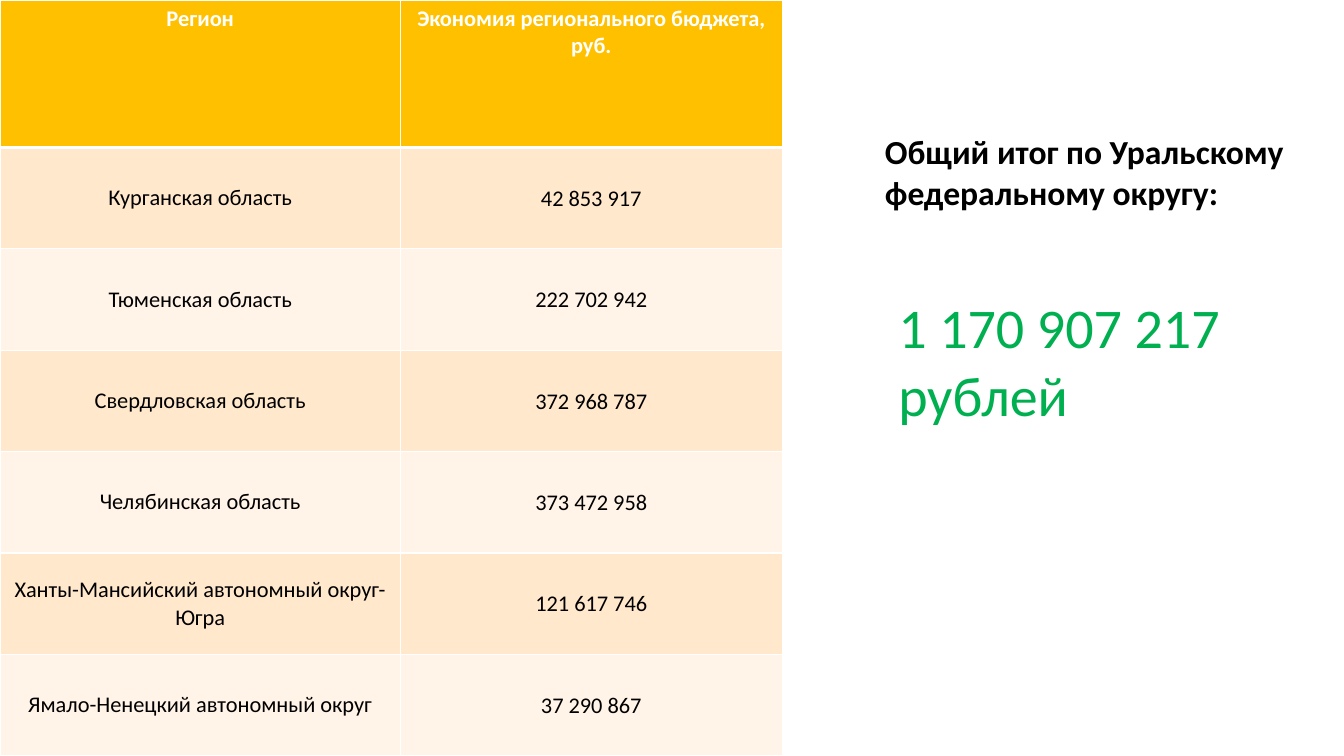
from dataclasses import dataclass

from lxml import etree
from pptx import Presentation
from pptx import util as u
from pptx.dml.color import RGBColor
from pptx.enum import text
from pptx.oxml import ns

WIDTH, HEIGHT = u.Inches(13.33), u.Inches(7.5)
COLUMN_SHARES = (0.298, 0.284)
HEADER_SHARE = 0.195
WHITE, BLACK, AMBER, GREEN = "FFFFFF", "000000", "FFC000", "00B050"
BANDS = ("FFE8CC", "FFF4E7")


@dataclass(frozen=True)
class Saving:
    region: str
    roubles: str


@dataclass(frozen=True)
class Summary:
    words: str
    left: float
    top: float
    width: float
    height: float
    size: int
    colour: str
    bold: bool


HEADINGS = Saving("Регион", "Экономия регионального бюджета, руб.")
SAVINGS = (
    Saving("Курганская область", "42 853 917"),
    Saving("Тюменская область", "222 702 942"),
    Saving("Свердловская область", "372 968 787"),
    Saving("Челябинская область", "373 472 958"),
    Saving("Ханты-Мансийский автономный округ-Югра", "121 617 746"),
    Saving("Ямало-Ненецкий автономный округ", "37 290 867"),
)
SUMMARIES = (
    Summary("Общий итог по Уральскому федеральному округу:",
            0.651, 0.167, 0.349, 0.121, 24, BLACK, True),
    Summary("1 170 907 217 рублей",
            0.661, 0.381, 0.339, 0.193, 40, GREEN, False),
)


def rgb(colour: str) -> RGBColor:
    return RGBColor.from_string(colour)


def add_words(paragraph, words: str, size: int, colour: str, bold: bool) -> None:
    run = paragraph.add_run()
    run.text = words
    run.font.name = "Calibri"
    run.font.size = u.Pt(size)
    run.font.bold = bold
    run.font.color.rgb = rgb(colour)


def add_borders(cell, bottom: float) -> None:
    properties = cell._tc.get_or_add_tcPr()
    sides = {"lnL": 1, "lnR": 1, "lnT": 1, "lnB": bottom}
    for position, (side, points) in enumerate(sides.items()):
        border = etree.Element(ns.qn(f"a:{side}"), w=str(u.Pt(points)))
        fill = etree.SubElement(border, ns.qn("a:solidFill"))
        etree.SubElement(fill, ns.qn("a:srgbClr"), val=WHITE)
        properties.insert(position, border)


def fill_cell(cell, words: str, fill: str, heading: bool) -> None:
    cell.fill.solid()
    cell.fill.fore_color.rgb = rgb(fill)
    add_borders(cell, 3 if heading else 1)
    if not heading:
        cell.vertical_anchor = text.MSO_ANCHOR.MIDDLE
    paragraph = cell.text_frame.paragraphs[0]
    paragraph.alignment = text.PP_ALIGN.CENTER
    add_words(paragraph, words, 16, WHITE if heading else BLACK, heading)


def add_savings(slide) -> None:
    entries = (HEADINGS, *SAVINGS)
    table = slide.shapes.add_table(
        len(entries), len(COLUMN_SHARES), 0, 0,
        int(WIDTH * sum(COLUMN_SHARES)), HEIGHT).table
    for column, share in zip(table.columns, COLUMN_SHARES):
        column.width = int(WIDTH * share)
    body_share = (1 - HEADER_SHARE) / len(SAVINGS)
    for index, entry in enumerate(entries):
        heading = index == 0
        table.rows[index].height = int(HEIGHT * (HEADER_SHARE if heading else body_share))
        fill = AMBER if heading else BANDS[(index - 1) % len(BANDS)]
        region, roubles = table.rows[index].cells
        fill_cell(region, entry.region, fill, heading)
        fill_cell(roubles, entry.roubles, fill, heading)
        if not heading:
            roubles.margin_left = roubles.margin_right = roubles.margin_top = u.Inches(0.01)
            roubles.margin_bottom = 0


def add_summary(slide, summary: Summary) -> None:
    frame = slide.shapes.add_textbox(
        int(WIDTH * summary.left), int(HEIGHT * summary.top),
        int(WIDTH * summary.width), int(HEIGHT * summary.height)).text_frame
    frame.word_wrap = True
    frame.auto_size = text.MSO_AUTO_SIZE.SHAPE_TO_FIT_TEXT
    add_words(frame.paragraphs[0], summary.words, summary.size, summary.colour, summary.bold)


def main() -> None:
    """Build the slide on regional budget savings in the Urals."""
    deck = Presentation()
    deck.slide_width, deck.slide_height = WIDTH, HEIGHT
    slide = deck.slides.add_slide(deck.slide_layouts[6])
    add_savings(slide)
    for summary in SUMMARIES:
        add_summary(slide, summary)
    deck.save("out.pptx")


if __name__ == "__main__":
    main()
